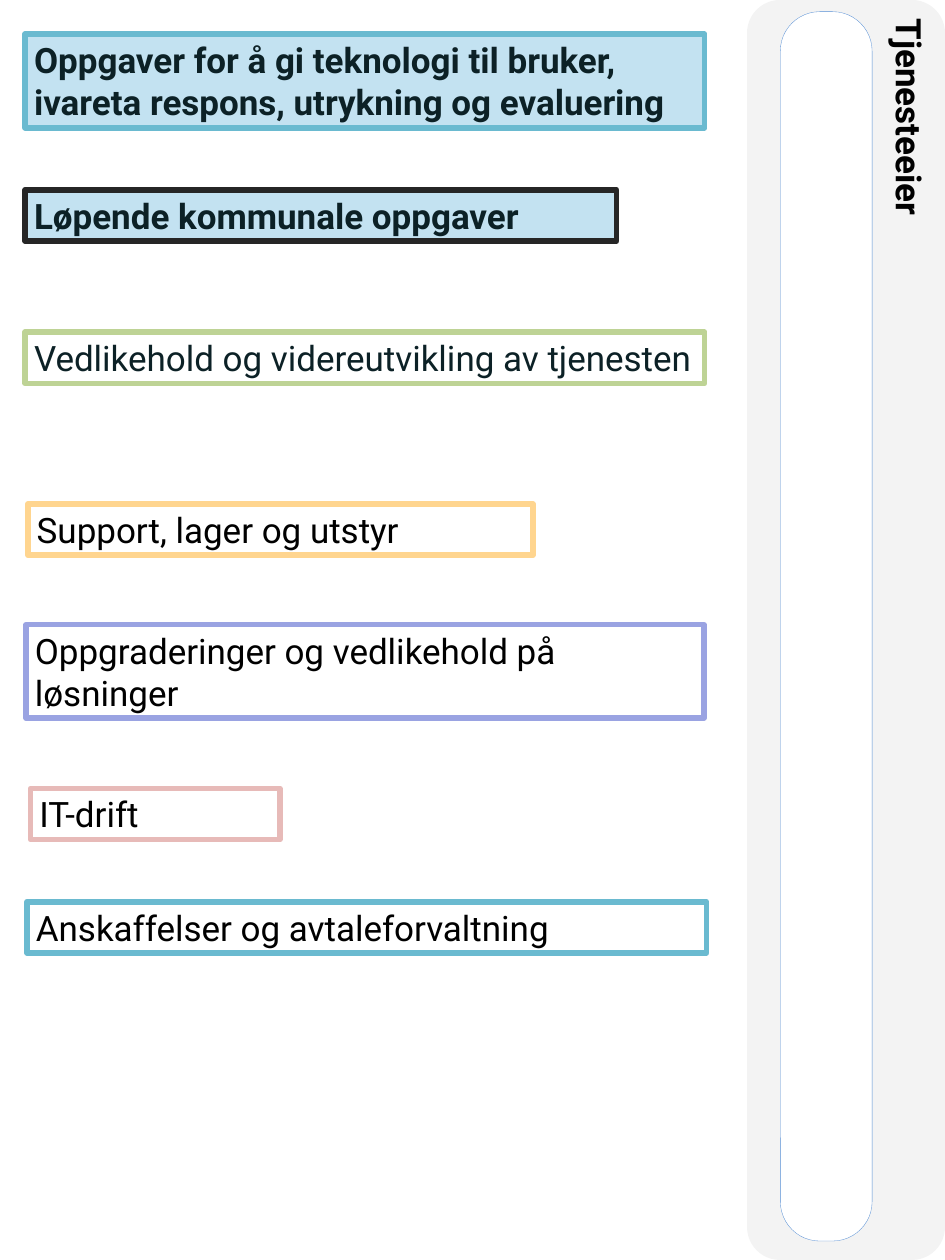
"""Build a task overview slide with a vertical service owner lane."""
from pptx import Presentation
from pptx.dml.color import RGBColor
from pptx.enum.shapes import MSO_SHAPE as Shape
from pptx.enum.text import MSO_ANCHOR as Anchor, MSO_AUTO_SIZE as AutoSize, PP_ALIGN as Align
from pptx.util import Inches, Pt

BLACK = RGBColor(0x00, 0x00, 0x00)
WHITE = RGBColor(0xFF, 0xFF, 0xFF)
LANE_GREY = RGBColor(0xF3, 0xF3, 0xF3)
INK = RGBColor(0x0C, 0x21, 0x26)
CHARCOAL = RGBColor(0x26, 0x26, 0x26)
PALE_BLUE = RGBColor(0xC3, 0xE2, 0xF1)
TEAL = RGBColor(0x6A, 0xBA, 0xD0)
GREEN = RGBColor(0xBE, 0xD3, 0x95)
YELLOW = RGBColor(0xFF, 0xD5, 0x8F)
VIOLET = RGBColor(0x9A, 0xA3, 0xE2)
PINK = RGBColor(0xE7, 0xBA, 0xB8)
BLUE = RGBColor(0x55, 0x8E, 0xD5)

ONE_LINE, TWO_LINES = 0.57, 1.04

prs = Presentation()
prs.slide_width, prs.slide_height = Inches(10.5), Inches(14)
slide = prs.slides.add_slide(prs.slide_layouts[6])


def add_box(text, *, at, shape=Shape.RECTANGLE, fill=None, line=None, width=4.5,
            color=BLACK, bold=False, rotation=0, grow=False):
    box = slide.shapes.add_shape(shape, *[Inches(n) for n in at])
    box.shadow.inherit = False
    box.rotation = rotation
    if fill is None:
        box.fill.background()
    else:
        box.fill.solid()
        box.fill.fore_color.rgb = fill
    if line is None:
        box.line.fill.background()
    else:
        box.line.color.rgb = line
        box.line.width = Pt(width)
    if text:
        frame = box.text_frame
        frame.word_wrap = True
        frame.vertical_anchor = Anchor.TOP
        if grow:
            frame.auto_size = AutoSize.SHAPE_TO_FIT_TEXT
        paragraph = frame.paragraphs[0]
        paragraph.alignment = Align.LEFT
        run = paragraph.add_run()
        run.text = text
        run.font.name = "Roboto"
        run.font.size = Pt(28)
        run.font.bold = bold
        run.font.color.rgb = color
    return box


add_box("Tjenesteeier", at=(2.4, 5.9, 14, 2.2), shape=Shape.ROUNDED_RECTANGLE,
        fill=LANE_GREY, bold=True, rotation=90)

tasks = [
    ("Løpende kommunale oppgaver", (0.28, 2.11, 6.57, ONE_LINE), CHARCOAL, PALE_BLUE, INK),
    ("Vedlikehold og videreutvikling av tjenesten", (0.28, 3.69, 7.55, ONE_LINE), GREEN, None, INK),
    ("Support, lager og utstyr", (0.31, 5.6, 5.61, ONE_LINE), YELLOW, None, BLACK),
    ("IT-drift", (0.34, 8.76, 2.77, ONE_LINE), PINK, None, BLACK),
    ("Oppgraderinger og vedlikehold på løsninger", (0.29, 6.94, 7.53, TWO_LINES), VIOLET, None, BLACK),
    ("Anskaffelser og avtaleforvaltning", (0.3, 10.02, 7.55, ONE_LINE), TEAL, None, BLACK),
    ("Oppgaver for å gi teknologi til bruker, ivareta respons, utrykning og evaluering",
     (0.28, 0.38, 7.55, TWO_LINES), TEAL, PALE_BLUE, INK),
]
for label, place, border, fill, ink in tasks:
    add_box(label, at=place, line=border, fill=fill, color=ink, bold=fill is not None, grow=True)

owner_track = add_box("", at=(2.35, 6.45, 13.66, 1.02), shape=Shape.ROUNDED_RECTANGLE,
                      fill=WHITE, line=BLUE, width=0.25, rotation=90)
owner_track.adjustments[0] = 0.43

prs.save("out.pptx")
